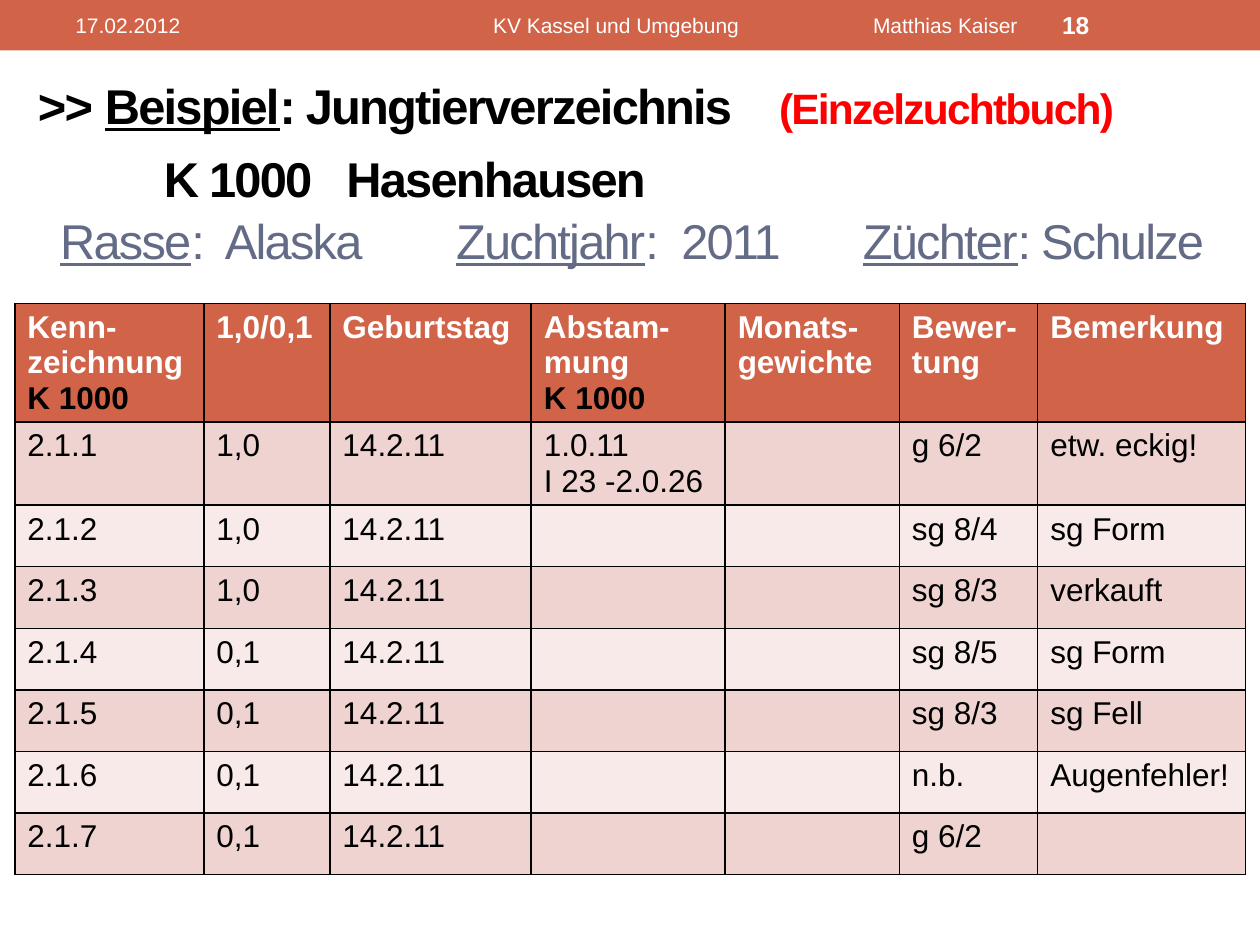
from dataclasses import dataclass, field

import pptx
import pptx.dml.color
import pptx.enum.shapes
import pptx.enum.text
import pptx.oxml
import pptx.oxml.ns
import pptx.util
from pptx.util import Cm, Pt

RUST, WHITE, BLACK, RED, SLATE = "D16349", "FFFFFF", "000000", "FF0000", "646B86"
BANDS = ("EED3D0", "F7EAE9")
ANCHOR = pptx.enum.text.MSO_ANCHOR
LEFT = pptx.enum.text.PP_ALIGN.LEFT


@dataclass
class Span:
    text: str
    color: str
    size: float
    bold: bool = False
    underline: bool = False
    spacing: int = 0


@dataclass
class TitleLine:
    spans: list[Span]
    height: float
    tabs: list[float] = field(default_factory=list)


@dataclass
class HeaderText:
    text: str
    left: float
    width: float
    size: float = 12
    bold: bool = False
    inset: float = 0.25
    tabs: list[float] = field(default_factory=list)


def rgb(color: str) -> pptx.dml.color.RGBColor:
    return pptx.dml.color.RGBColor.from_string(color)


def set_fill(target, color: str) -> None:
    target.fill.solid()
    target.fill.fore_color.rgb = rgb(color)


def add_span(paragraph, span: Span) -> None:
    run = paragraph.add_run()
    run.text = span.text
    run.font.color.rgb = rgb(span.color)
    formats = {"name": "Arial", "size": Pt(span.size), "bold": span.bold,
               "underline": span.underline}
    for name, value in formats.items():
        setattr(run.font, name, value)
    if span.spacing:
        run._r.get_or_add_rPr().set("spc", str(span.spacing))


def set_tabs(paragraph, tabs: list[float]) -> None:
    """Add left tab stops, given in centimetres."""
    if not tabs:
        return
    properties = paragraph._p.get_or_add_pPr()
    stops = "".join(f'<a:tab pos="{int(Cm(tab))}" algn="l"/>' for tab in tabs)
    properties.append(pptx.oxml.parse_xml(
        f'<a:tabLst {pptx.oxml.ns.nsdecls("a")}>{stops}</a:tabLst>'))


def heading(text: str, size: float = 27.9, color: str = BLACK, underline: bool = False) -> Span:
    return Span(text, color, size, True, underline, -100)


def detail(text: str, underline: bool = False) -> Span:
    return Span(text, SLATE, 27.9, False, underline, -100)


TITLE_LINES = [
    TitleLine([heading(">> "), heading("Beispiel", underline=True),
               heading(": Jungtierverzeichnis\t"),
               heading("(Einzelzuchtbuch)", 24.3, RED)], 35, [14.94]),
    TitleLine([heading("\tK 1000\tHasenhausen")], 42, [2.54, 6.22]),
    TitleLine([detail("\t"), detail("Rasse", True), detail(":\tAlaska\t"),
               detail("Zuchtjahr", True), detail(":\t2011\t"),
               detail("Züchter", True), detail(": Schulze")],
              35, [0.45, 3.77, 8.43, 12.97, 16.63]),
]
HEADER_TEXTS = [
    HeaderText("17.02.2012", 1.27, 8.05),
    HeaderText("KV Kassel und Umgebung\tMatthias Kaiser", 9.53, 11.43, inset=0.41, tabs=[7.66]),
    HeaderText("18", 21.16, 2.97, size=14, bold=True),
]
COLUMN_WIDTHS = [3.81, 2.54, 4.06, 3.91, 3.51, 2.79, 4.19]
HEADINGS = ["Kenn-zeichnung\nK 1000", "1,0/0,1", "Geburtstag", "Abstam-mung\nK 1000",
            "Monats-gewichte", "Bewer-tung", "Bemerkung"]
BIRTHDAY = "14.2.11"
ANIMALS = [
    ("2.1.1", "1,0", BIRTHDAY, "1.0.11\nI 23 -2.0.26", "", "g 6/2", "etw. eckig!"),
    ("2.1.2", "1,0", BIRTHDAY, "", "", "sg 8/4", "sg Form"),
    ("2.1.3", "1,0", BIRTHDAY, "", "", "sg 8/3", "verkauft"),
    ("2.1.4", "0,1", BIRTHDAY, "", "", "sg 8/5", "sg Form"),
    ("2.1.5", "0,1", BIRTHDAY, "", "", "sg 8/3", "sg Fell"),
    ("2.1.6", "0,1", BIRTHDAY, "", "", "n.b.", "Augenfehler!"),
    ("2.1.7", "0,1", BIRTHDAY, "", "", "g 6/2", ""),
]


def add_header_band(slide, width: int) -> None:
    band = slide.shapes.add_shape(
        pptx.enum.shapes.MSO_SHAPE.RECTANGLE, 0, 0, width, Cm(1.02))
    band.shadow.inherit = False
    set_fill(band, RUST)
    band.line.fill.background()


def add_header_text(slide, item: HeaderText) -> None:
    box = slide.shapes.add_textbox(Cm(item.left), Cm(0.05), Cm(item.width), Cm(0.91))
    frame = box.text_frame
    formats = {"word_wrap": True, "vertical_anchor": ANCHOR.MIDDLE,
               "margin_left": Cm(item.inset)}
    for name, value in formats.items():
        setattr(frame, name, value)
    set_tabs(frame.paragraphs[0], item.tabs)
    add_span(frame.paragraphs[0], Span(item.text, WHITE, item.size, item.bold))


def fill_title(title, lines: list[TitleLine]) -> None:
    place = {"left": Cm(0.51), "top": Cm(1.12), "width": Cm(24.41), "height": Cm(4.65)}
    for name, value in place.items():
        setattr(title, name, value)
    frame = title.text_frame
    frame.auto_size = pptx.enum.text.MSO_AUTO_SIZE.NONE
    frame.vertical_anchor = ANCHOR.MIDDLE
    for index, line in enumerate(lines):
        paragraph = frame.add_paragraph() if index else frame.paragraphs[0]
        formats = {"alignment": LEFT, "line_spacing": Pt(line.height),
                   "space_before": Pt(0), "space_after": Pt(0)}
        for name, value in formats.items():
            setattr(paragraph, name, value)
        set_tabs(paragraph, line.tabs)
        for span in line.spans:
            add_span(paragraph, span)


def add_borders(cell) -> None:
    properties = cell._tc.get_or_add_tcPr()
    for side in ("lnL", "lnR", "lnT", "lnB"):
        properties.append(pptx.oxml.parse_xml(
            f'<a:{side} {pptx.oxml.ns.nsdecls("a")} w="{int(Pt(1))}"><a:solidFill>'
            f'<a:srgbClr val="{BLACK}"/></a:solidFill></a:{side}>'))


def fill_cell(cell, text: str, is_heading: bool, color: str) -> None:
    add_borders(cell)
    set_fill(cell, color)
    for index, line in enumerate(text.split("\n")):
        paragraph = cell.text_frame.add_paragraph() if index else cell.text_frame.paragraphs[0]
        if line:
            text_color = WHITE if is_heading and index == 0 else BLACK
            add_span(paragraph, Span(line, text_color, 18, is_heading))


def add_animal_table(slide) -> None:
    rows = [HEADINGS, *ANIMALS]
    table = slide.shapes.add_table(
        len(rows), len(COLUMN_WIDTHS), Cm(0.3), Cm(6.12),
        Cm(sum(COLUMN_WIDTHS)), Cm(10.81)).table
    for column, width in zip(table.columns, COLUMN_WIDTHS):
        column.width = Cm(width)
    for row_index, row in enumerate(rows):
        is_heading = row_index == 0
        table.rows[row_index].height = Cm(2.13 if is_heading else 1.24)
        color = RUST if is_heading else BANDS[(row_index - 1) % 2]
        for column_index, text in enumerate(row):
            fill_cell(table.cell(row_index, column_index), text, is_heading, color)


def main() -> None:
    presentation = pptx.Presentation()
    presentation.slide_width, presentation.slide_height = Cm(25.4), Cm(19.05)
    slide = presentation.slides.add_slide(presentation.slide_layouts[5])
    add_header_band(slide, presentation.slide_width)
    fill_title(slide.shapes.title, TITLE_LINES)
    add_animal_table(slide)
    for item in HEADER_TEXTS:
        add_header_text(slide, item)
    presentation.save("out.pptx")


if __name__ == "__main__":
    main()
